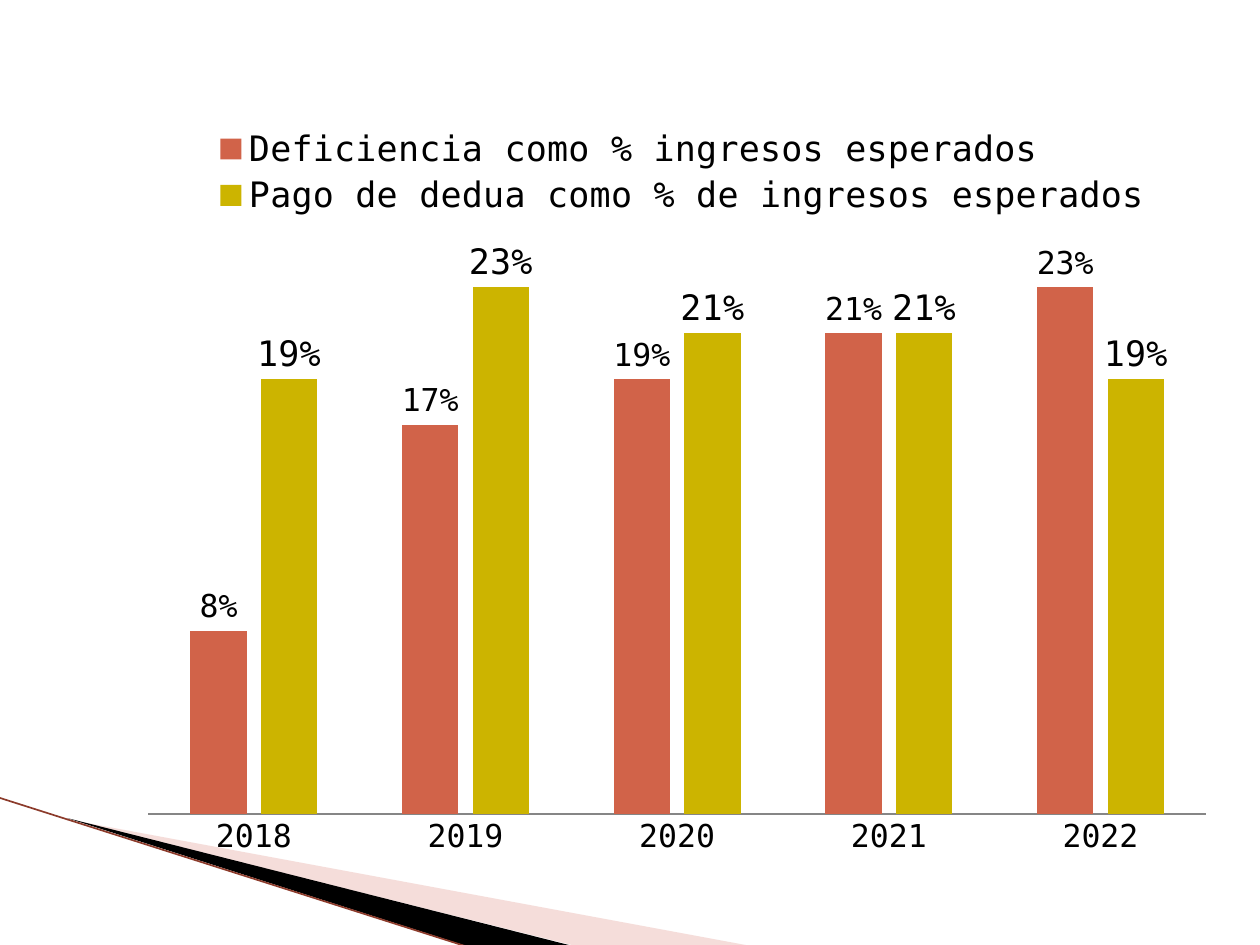
from lxml.etree import SubElement
from pptx import Presentation
from pptx.chart.data import CategoryChartData
from pptx.dml.color import RGBColor
from pptx.enum.chart import XL_CHART_TYPE, XL_LABEL_POSITION, XL_LEGEND_POSITION, XL_TICK_MARK
from pptx.oxml import parse_xml
from pptx.oxml.ns import nsdecls, qn
from pptx.util import Pt

FONT = "DejaVu Sans Mono"
YEARS = ["2018", "2019", "2020", "2021", "2022"]
SERIES = [
    ("Deficiencia como % ingresos esperados", (0.08, 0.17, 0.19, 0.21, 0.23), "D16349", 18),
    ("Pago de dedua como % de ingresos esperados", (0.19, 0.23, 0.21, 0.21, 0.19), "CCB400", 20),
]


def color(value):
    return RGBColor.from_string(value)


def set_font(font, size):
    font.name = FONT
    font.size = Pt(size)
    font.color.rgb = color("000000")


def manual_layout(x, y, width, height, inner=False):
    target = '<c:layoutTarget val="inner"/>' if inner else ""
    return parse_xml(
        f'<c:layout {nsdecls("c")}><c:manualLayout>{target}'
        '<c:xMode val="edge"/><c:yMode val="edge"/>'
        f'<c:x val="{x}"/><c:y val="{y}"/><c:w val="{width}"/><c:h val="{height}"/>'
        "</c:manualLayout></c:layout>"
    )


def replace_layout(element, layout, index):
    for old in element.findall(qn("c:layout")):
        element.remove(old)
    element.insert(index, layout)


def add_wedge(slide, left, top, points, fill, opacity=100):
    builder = slide.shapes.build_freeform(Pt(left), Pt(top), scale=1.0)
    builder.add_line_segments([(Pt(left + x), Pt(top + y)) for x, y in points])
    shape = builder.convert_to_shape()
    shape.shadow.inherit = False
    shape.fill.solid()
    shape.fill.fore_color.rgb = color(fill)
    shape.line.fill.background()
    if opacity < 100:
        srgb = shape.fill._xPr.find(".//" + qn("a:srgbClr"))
        SubElement(srgb, qn("a:alpha"), val=str(opacity * 1000))


def add_corner(slide, left, top, width, height):
    add_wedge(slide, left + 40, top + 12.5, [(388.8, 72), (288.7, 72)], "E7ACA4", 40)
    add_wedge(slide, left + 38.5, top + 11.5, [(290.5, 73.5), (229.5, 73.5)], "000000")
    edge = slide.shapes.add_connector(1, Pt(left), Pt(top), Pt(left + width), Pt(top + height))
    edge.line.color.rgb = color("8C3B2B")
    edge.line.width = Pt(0.95)
    SubElement(edge._element.spPr, qn("a:effectLst"))


def add_column_chart(slide, left, top, width, height):
    data = CategoryChartData(number_format="0%")
    data.categories = YEARS
    for name, values, _, _ in SERIES:
        data.add_series(name, values)
    chart = slide.shapes.add_chart(
        XL_CHART_TYPE.COLUMN_CLUSTERED, Pt(left), Pt(top), Pt(width), Pt(height), data
    ).chart
    set_font(chart.font, 18)
    chart.has_title = False

    chart.has_legend = True
    chart.legend.position = XL_LEGEND_POSITION.TOP
    chart.legend.include_in_layout = False
    set_font(chart.legend.font, 20)
    replace_layout(chart.legend._element, manual_layout(0.07, 0.01, 0.87, 0.13), 1)
    plot_area = chart._chartSpace.chart.plotArea
    replace_layout(plot_area, manual_layout(0.02, 0.167, 0.96, 0.757, inner=True), 0)

    value_axis = chart.value_axis
    value_axis.minimum_scale = 0
    value_axis.maximum_scale = 0.25
    value_axis.has_major_gridlines = False
    value_axis.visible = False
    category_axis = chart.category_axis
    category_axis.major_tick_mark = XL_TICK_MARK.NONE
    category_axis.format.line.color.rgb = color("868686")
    category_axis.format.line.width = Pt(0.75)
    set_font(category_axis.tick_labels.font, 18)

    plot = chart.plots[0]
    plot.vary_by_categories = False
    plot.gap_width = 150
    plot.overlap = -25
    for series, (_, _, fill, label_size) in zip(plot.series, SERIES):
        series.format.fill.solid()
        series.format.fill.fore_color.rgb = color(fill)
        labels = series.data_labels
        labels.show_value = True
        labels.number_format = "0%"
        labels.number_format_is_linked = False
        labels.position = XL_LABEL_POSITION.OUTSIDE_END
        set_font(labels.font, label_size)


def main():
    presentation = Presentation()
    presentation.slide_width = Pt(720)
    presentation.slide_height = Pt(540)
    slide = presentation.slides.add_slide(presentation.slide_layouts[6])
    add_corner(slide, 0, 456, 267, 85)
    add_column_chart(slide, 72, 66, 630, 432)
    presentation.save("out.pptx")


if __name__ == "__main__":
    main()
